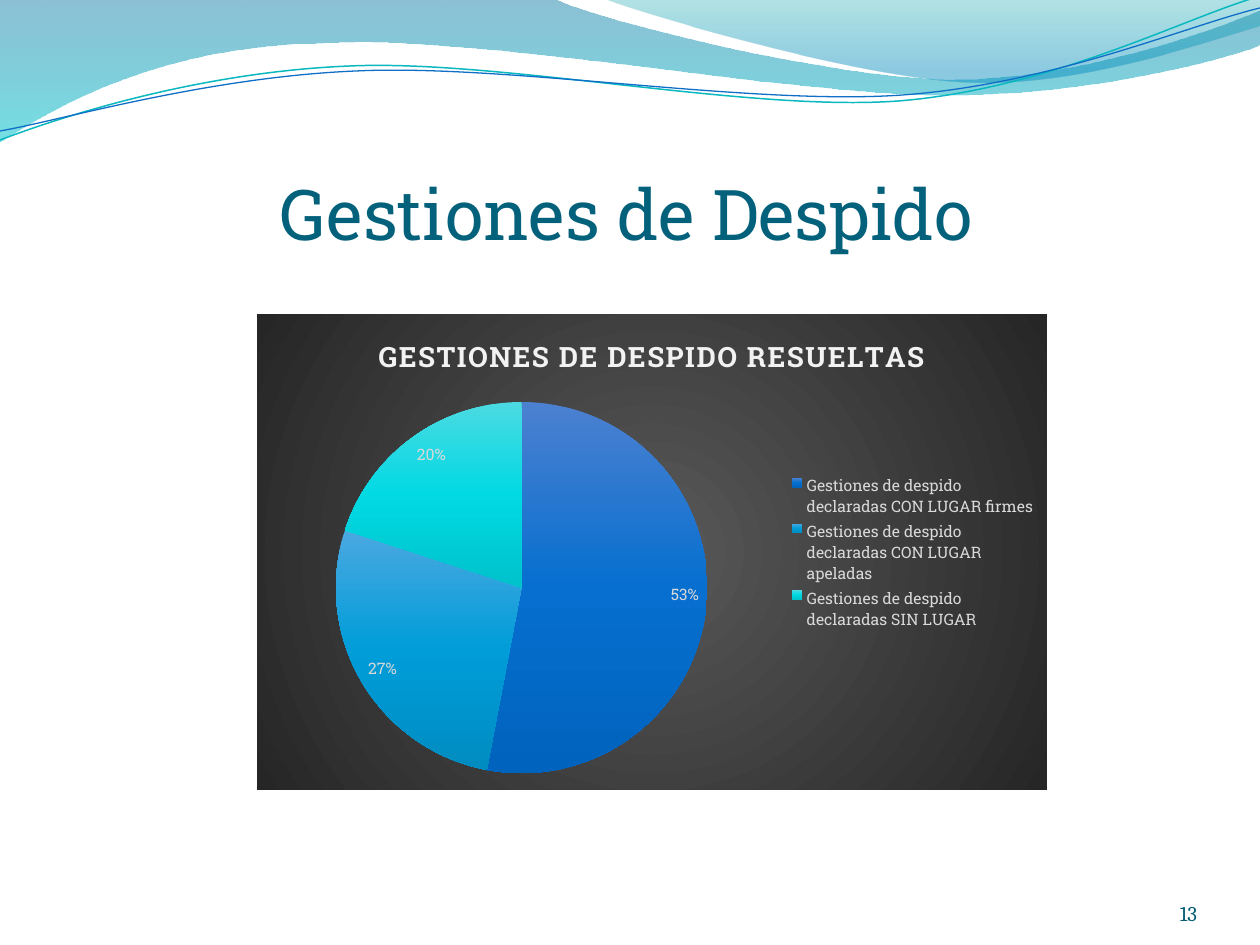
from lxml.etree import SubElement
from pptx import Presentation
from pptx.chart.data import CategoryChartData
from pptx.dml.color import RGBColor
from pptx.enum.chart import XL_CHART_TYPE, XL_LABEL_POSITION, XL_LEGEND_POSITION
from pptx.enum.text import MSO_ANCHOR, PP_ALIGN
from pptx.oxml import parse_xml
from pptx.oxml.ns import nsdecls, qn
from pptx.util import Emu, Pt

PX = 914400 / 126
SLAB = "Roboto Slab"


def write(frame, text, font=SLAB, size=10, color="000000", bold=False,
          align=PP_ALIGN.CENTER, spacing=None):
    """Put one formatted run in a text frame."""
    paragraph = frame.paragraphs[0]
    paragraph.alignment = align
    run = paragraph.add_run()
    run.text = text
    run.font.name, run.font.size, run.font.bold = font, Pt(size), bold
    run.font.color.rgb = RGBColor.from_string(color)
    if spacing:
        run.font._element.set("spc", str(spacing))


def gradient(stops, direction='<a:lin ang="5400000" scaled="0"/>'):
    """Gradient fill from (position %, colour, opacity %) stops."""
    marks = "".join(
        f'<a:gs pos="{pos * 1000}"><a:srgbClr val="{color}">'
        f'<a:alpha val="{opacity * 1000}"/></a:srgbClr></a:gs>'
        for pos, color, opacity in stops)
    return parse_xml(f'<a:gradFill {nsdecls("a")} rotWithShape="1">'
                     f'<a:gsLst>{marks}</a:gsLst>{direction}</a:gradFill>')


prs = Presentation()
prs.slide_width, prs.slide_height = Emu(9144000), Emu(6858000)
slide = prs.slides.add_slide(prs.slide_layouts[5])

# Header waves: a start, then steps of one point (line) or three (Bezier curve)
waves = [
    ((0, 0), [
        [(554, -1)],
        [(600, 21), (837, 79), (955, 79)],
        [(1075, 79), (1207, 33), (1260, 11)],
        [(1261, 45)],
        [(1239, 55), (1096, 96), (940, 95)],
        [(784, 94), (481, 35), (324, 43)],
        [(163, 45), (58, 105), (-1, 142)],
        [(0, 0)]],
     [(0, "0074A1", 45), (100, "00C6CF", 55)], None),
    ((604, -1), [
        [(641, 14), (859, 78), (969, 82)],
        [(1079, 87), (1211, 40), (1260, 26)],
        [(1260, 0)],
        [(604, -1)]],
     [(0, "00A1A9", 30), (80, "008BBF", 45)], None),
    ((0, 140), [
        [(60, 117), (199, 72), (349, 66)],
        [(498, 59), (747, 112), (898, 101)],
        [(1050, 89), (1182, 19), (1257, -3)]],
     None, ("0AB8BF", 0.85)),
    ((0, 131), [
        [(59, 121), (207, 77), (357, 71)],
        [(508, 64), (752, 106), (903, 95)],
        [(1053, 84), (1186, 26), (1260, 8)]],
     None, ("0F6FC6", 0.75)),
]
for start, steps, stops, stroke in waves:
    builder = slide.shapes.build_freeform(*start, scale=PX)
    builder.add_line_segments([point for step in steps for point in step],
                              close=bool(stops))
    wave = builder.convert_to_shape()
    wave.shadow.inherit = False

    # Merge the three segments of each curve step into one Bezier
    segments = iter(list(wave._element.iter(qn("a:lnTo"))))
    for step in steps:
        first = next(segments)
        if len(step) == 3:
            first.tag = qn("a:cubicBezTo")
            for _ in range(2):
                extra = next(segments)
                first.append(extra[0])
                extra.getparent().remove(extra)

    if stops:
        wave.line.fill.background()
        wave._element.spPr.find(qn("a:custGeom")).addnext(gradient(stops))
    else:
        wave.fill.background()
        wave.line.color.rgb = RGBColor.from_string(stroke[0])
        wave.line.width = Pt(stroke[1])

# Title, in front of the waves, and page number
heading = slide.shapes.title
slide.shapes._spTree.append(heading._element)
page_number = slide.shapes.add_textbox(0, 0, 0, 0)
for box, (left, top, width, height), inset in (
        (heading, (63, 97, 1144, 158), 6), (page_number, (1092, 876, 105, 50), 0)):
    box.left, box.top = Emu(round(left * PX)), Emu(round(top * PX))
    box.width, box.height = Emu(round(width * PX)), Emu(round(height * PX))
    frame = box.text_frame
    frame.word_wrap = True
    frame.vertical_anchor = MSO_ANCHOR.BOTTOM
    frame.margin_left = frame.margin_right = frame.margin_bottom = 0
    frame.margin_top = Emu(round(inset * PX))
write(heading.text_frame, "Gestiones de Despido ", size=40, color="04617B")
write(page_number.text_frame, "13", font="Cambria", size=12, color="045D75",
      align=PP_ALIGN.RIGHT)

# Pie chart of resolved dismissals
rulings = CategoryChartData()
rulings.categories = ["Gestiones de despido declaradas CON LUGAR firmes",
                      "Gestiones de despido declaradas CON LUGAR apeladas",
                      "Gestiones de despido declaradas SIN LUGAR"]
rulings.add_series("Series 1", (53, 27, 20))
chart = slide.shapes.add_chart(
    XL_CHART_TYPE.PIE, *(Emu(round(v * PX)) for v in (257, 314, 790, 476)), rulings).chart
chart.font.name, chart.font.size = SLAB, Pt(10)
write(chart.chart_title.text_frame, "GESTIONES DE DESPIDO RESUELTAS",
      size=16, color="F2F2F2", bold=True, spacing=100)
chart.chart_title.include_in_layout = False

chart.has_legend = True
chart.legend.position = XL_LEGEND_POSITION.RIGHT
chart.legend.include_in_layout = False

pie = chart.plots[0]
pie.vary_by_categories = True
pie.has_data_labels = True
labels = pie.data_labels
labels.show_percentage, labels.show_value = True, False
labels.number_format, labels.number_format_is_linked = "0%", False
labels.position = XL_LABEL_POSITION.INSIDE_END
for font in (labels.font, chart.legend.font):
    font.name, font.size = SLAB, Pt(9)
    font.color.rgb = RGBColor.from_string("D9D9D9")

# Slice gradients
slices = [("4C80D0", "066FCF", "0063BD"),
          ("4BA8E0", "009DD9", "008CC1"),
          ("4BDAE2", "01D9E3", "00C2CB")]
for i, colors in enumerate(slices):
    look = pie.series[0].points[i].format
    look.line.fill.background()
    stops = [(pos, color, 100) for pos, color in zip((0, 50, 100), colors)]
    look.line._get_or_add_ln().addprevious(gradient(stops))

# Dark radial chart background
background = parse_xml(f'<c:spPr {nsdecls("c", "a")}><a:ln><a:noFill/></a:ln></c:spPr>')
background.insert(0, gradient(
    [(0, "595959", 100), (100, "262626", 100)],
    '<a:path path="circle"><a:fillToRect l="50000" t="50000" r="50000" b="50000"/></a:path>'))
chart._chartSpace.find(qn("c:chart")).addnext(background)

# Fixed places of pie and legend, as fractions of the chart
plot_area = chart._chartSpace.chart.plotArea
legend = chart.legend._element
for parent, index, place in ((plot_area, 0, (0.1, 0.18, 0.47, 0.79)),
                             (legend, 1, (0.67, 0.33, 0.32, 0.34))):
    for old in parent.findall(qn("c:layout")):
        parent.remove(old)
    layout = parse_xml(f'<c:layout {nsdecls("c")}><c:manualLayout/></c:layout>')
    settings = [("xMode", "edge"), ("yMode", "edge"), *zip("xywh", place)]
    if parent is plot_area:
        settings.insert(0, ("layoutTarget", "inner"))
    for tag, value in settings:
        SubElement(layout[0], qn(f"c:{tag}")).set("val", str(value))
    parent.insert(index, layout)

prs.save("out.pptx")
